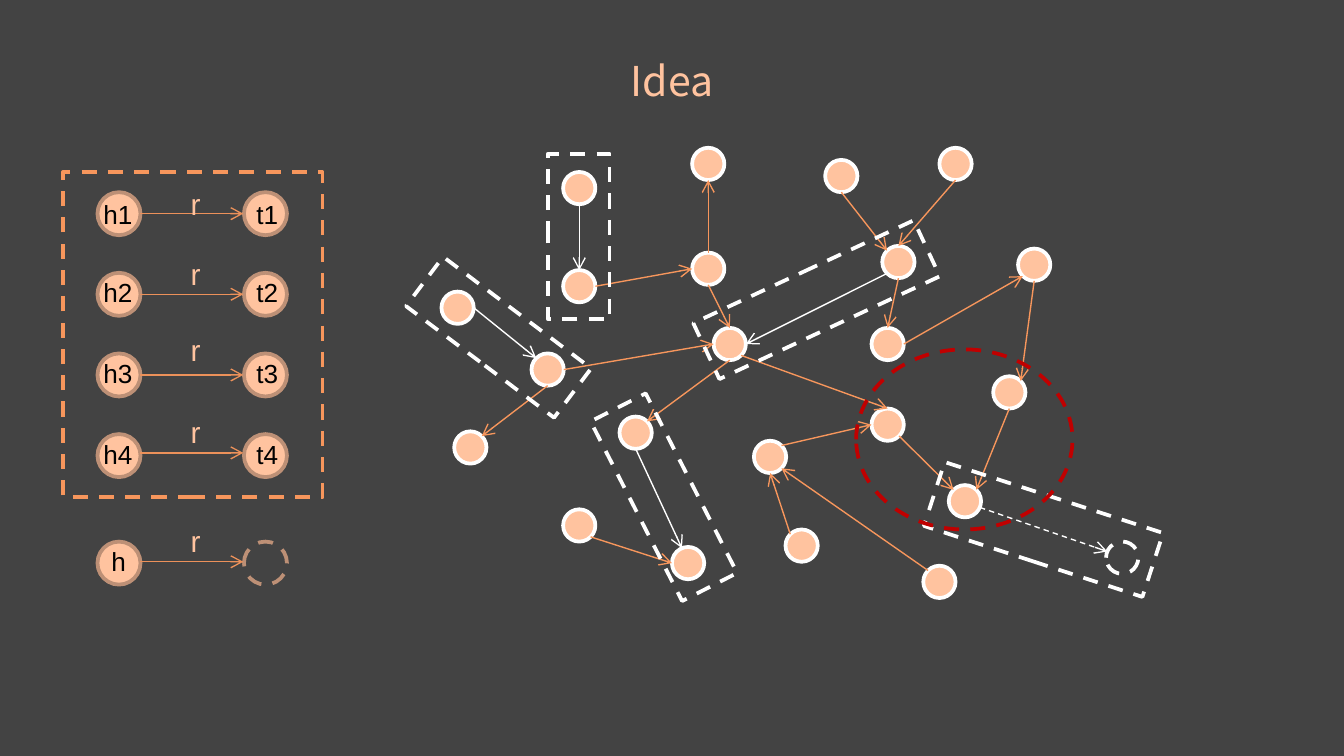
from math import cos, radians, sin

from lxml.etree import SubElement
from pptx import Presentation
from pptx.dml.color import RGBColor
from pptx.enum.dml import MSO_LINE
from pptx.enum.shapes import MSO_CONNECTOR, MSO_SHAPE
from pptx.enum.text import MSO_ANCHOR, MSO_AUTO_SIZE, PP_ALIGN
from pptx.oxml.ns import qn
from pptx.util import Inches, Pt

DARK = RGBColor(0x43, 0x43, 0x43)
PEACH = RGBColor(0xFF, 0xC3, 0x9F)
ORANGE = RGBColor(0xF7, 0x96, 0x5C)
RUST = RGBColor(0xEC, 0x91, 0x5A)
BROWN = RGBColor(0xBD, 0x90, 0x76)
WHITE = RGBColor(0xFF, 0xFF, 0xFF)
BLACK = RGBColor(0x00, 0x00, 0x00)
RED = RGBColor(0xC0, 0x00, 0x00)

# All lengths are in cells of a 100-column grid
COLUMNS, ROWS = 100, 56.25
CELL = Inches(10) / COLUMNS
NODE, ENTITY = 2.4, 3.2
HEAD_X, TAIL_X = 8.85, 19.75

# Head, tail, then rows of: circle centre, arrow, entity label, relation label
TRIPLES = [
    ("h1", "t1", 15.9, 15.9, 14.3, 13.3),
    ("h2", "t2", 21.9, 21.9, 20.1, 18.5),
    ("h3", "t3", 27.9, 27.9, 26.1, 24.2),
    ("h4", "t4", 33.9, 33.7, 32.1, 30.3),
    ("h", None, 41.9, 41.8, 40.1, 38.4),
]

# Centres of the graph nodes
NODES = {
    "a": (43.1, 21.3), "b": (40.75, 27.5), "c": (52.7, 20), "d": (47.3, 32.2),
    "e": (57.3, 34), "f": (54.3, 25.6), "g": (66.05, 25.6), "h": (66.05, 31.6),
    "i": (66.85, 19.5), "j": (52.7, 12.2), "k": (62.6, 13.1), "l": (76.95, 19.7),
    "m": (75.1, 29.2), "n": (71.8, 37.3), "o": (59.65, 40.6), "p": (51.2, 41.9),
    "q": (43.1, 39.1), "r": (35, 33.3), "s": (34.05, 22.9), "t": (43.1, 14),
    "u": (71.1, 12.2), "v": (69.9, 43.3), "w": (83.5, 41.5),
}
MISSING = "w"

# Start node and side, end node and side
EDGES = """b E f W, a E c W, c S f N, i S g N, f S d NE, e NE h W, f SE h N,
    c N j S, k S i NW, u S i N, g E l SW, m S n NE, h SE n NW, l S m NE,
    v NW e SE, b S r NE, q SE p W, o NW e S"""
PAIR_EDGES = "i SW f E, t S a N, s E b NW, d S p NNW"
MISSING_EDGE = "n ESE w WNW"

# Left, top, width, height, rotation
PAIR_BOXES = [
    (69.1, 36.9, 17.1, 5, 18),
    (30.2, 22.8, 13.8, 4.6, 37),
    (36.9, 15.3, 12.3, 4.6, 90),
    (51.7, 20, 18.1, 4.6, 155),
    (41.9, 34.7, 15, 4.6, 63),
]
COMPASS = "E ESE SE SSE S SSW SW WSW W WNW NW NNW N NNE NE ENE".split()


def cells(*values):
    return [round(v * CELL) for v in values]


def add_text(s, text, box, size, color, font="Arial", align=PP_ALIGN.LEFT,
             anchor=MSO_ANCHOR.TOP, inset=None, grow=True):
    tf = s.shapes.add_textbox(*cells(*box)).text_frame
    tf.word_wrap = True
    tf.auto_size = MSO_AUTO_SIZE.SHAPE_TO_FIT_TEXT if grow else MSO_AUTO_SIZE.NONE
    tf.vertical_anchor = anchor
    if inset is not None:
        tf.margin_left = tf.margin_right = inset
        tf.margin_top = tf.margin_bottom = inset
    p = tf.paragraphs[0]
    p.alignment = align
    r = p.add_run()
    r.text = text
    r.font.size, r.font.name = Pt(size), font
    r.font.color.rgb = color


def add_outline(s, kind, box, color, fill=None, dashed=False, rotation=0):
    sp = s.shapes.add_shape(kind, *cells(*box))
    sp.shadow.inherit = False
    sp.rotation = rotation
    if fill is None:
        sp.fill.background()
    else:
        sp.fill.solid()
        sp.fill.fore_color.rgb = fill
    sp.line.color.rgb, sp.line.width = color, Pt(2)
    if dashed:
        sp.line.dash_style = MSO_LINE.DASH


def add_circle(s, center, size, color, missing=False):
    """Draw a filled circle, or only a dashed outline when it is missing."""
    x, y = center
    add_outline(s, MSO_SHAPE.OVAL, (x - size / 2, y - size / 2, size, size),
                color, None if missing else PEACH, dashed=missing)


def add_arrow(s, start, end, color, dashed=False):
    line = s.shapes.add_connector(MSO_CONNECTOR.STRAIGHT, *cells(*start, *end))
    line.line.color.rgb, line.line.width = color, Pt(0.75)
    if dashed:
        line.line.dash_style = MSO_LINE.DASH
    sp_pr = line._element.spPr
    SubElement(sp_pr.find(qn("a:ln")), qn("a:tailEnd"), type="arrow")
    SubElement(sp_pr, qn("a:effectLst"))


def rim(node, side):
    """Return the point on a node's edge in a compass direction."""
    x, y = NODES[node]
    angle = radians(COMPASS.index(side) * 360 / len(COMPASS))
    return x + NODE / 2 * cos(angle), y + NODE / 2 * sin(angle)


def add_edges(s, edges, color, dashed=False):
    for edge in edges.split(","):
        a, a_side, b, b_side = edge.split()
        add_arrow(s, rim(a, a_side), rim(b, b_side), color, dashed)


def add_triples(s):
    add_outline(s, MSO_SHAPE.RECTANGLE, (4.7, 12.8, 19.3, 24.2), ORANGE, DARK, True)
    for head, tail, y, arrow_y, label_y, relation_y in TRIPLES:
        add_circle(s, (HEAD_X, y), ENTITY, BROWN)
        add_circle(s, (TAIL_X, y), ENTITY, BROWN, missing=tail is None)
        add_arrow(s, (10.4, arrow_y), (18.1, arrow_y), RUST)
        add_text(s, head, (6.7 if tail else 7.3, label_y, 6.5, 3.4), 14, BLACK)
        if tail:
            add_text(s, tail, (18.1, label_y, 6.5, 3.4), 14, BLACK)
        add_text(s, "r", (13.2, relation_y, 3.8, 3.7), 16, PEACH)


def add_graph(s):
    for name, center in NODES.items():
        add_circle(s, center, NODE, WHITE, missing=name == MISSING)
    add_edges(s, EDGES, ORANGE)
    add_edges(s, PAIR_EDGES, WHITE)
    add_edges(s, MISSING_EDGE, WHITE, dashed=True)
    for *box, rotation in PAIR_BOXES:
        add_outline(s, MSO_SHAPE.RECTANGLE, box, WHITE, dashed=True, rotation=rotation)
    add_outline(s, MSO_SHAPE.OVAL, (63.7, 26, 16.1, 13.4), RED, dashed=True)


def main():
    prs = Presentation()
    prs.slide_width, prs.slide_height = cells(COLUMNS, ROWS)
    s = prs.slides.add_slide(prs.slide_layouts[6])
    s.background.fill.solid()
    s.background.fill.fore_color.rgb = DARK
    add_text(s, "Idea", (7.7, 2, 84.6, 5.8), 22, PEACH, font="Noto Sans CJK SC",
             align=PP_ALIGN.CENTER, anchor=MSO_ANCHOR.BOTTOM, inset=0, grow=False)
    add_triples(s)
    add_graph(s)
    prs.save("out.pptx")


if __name__ == "__main__":
    main()
